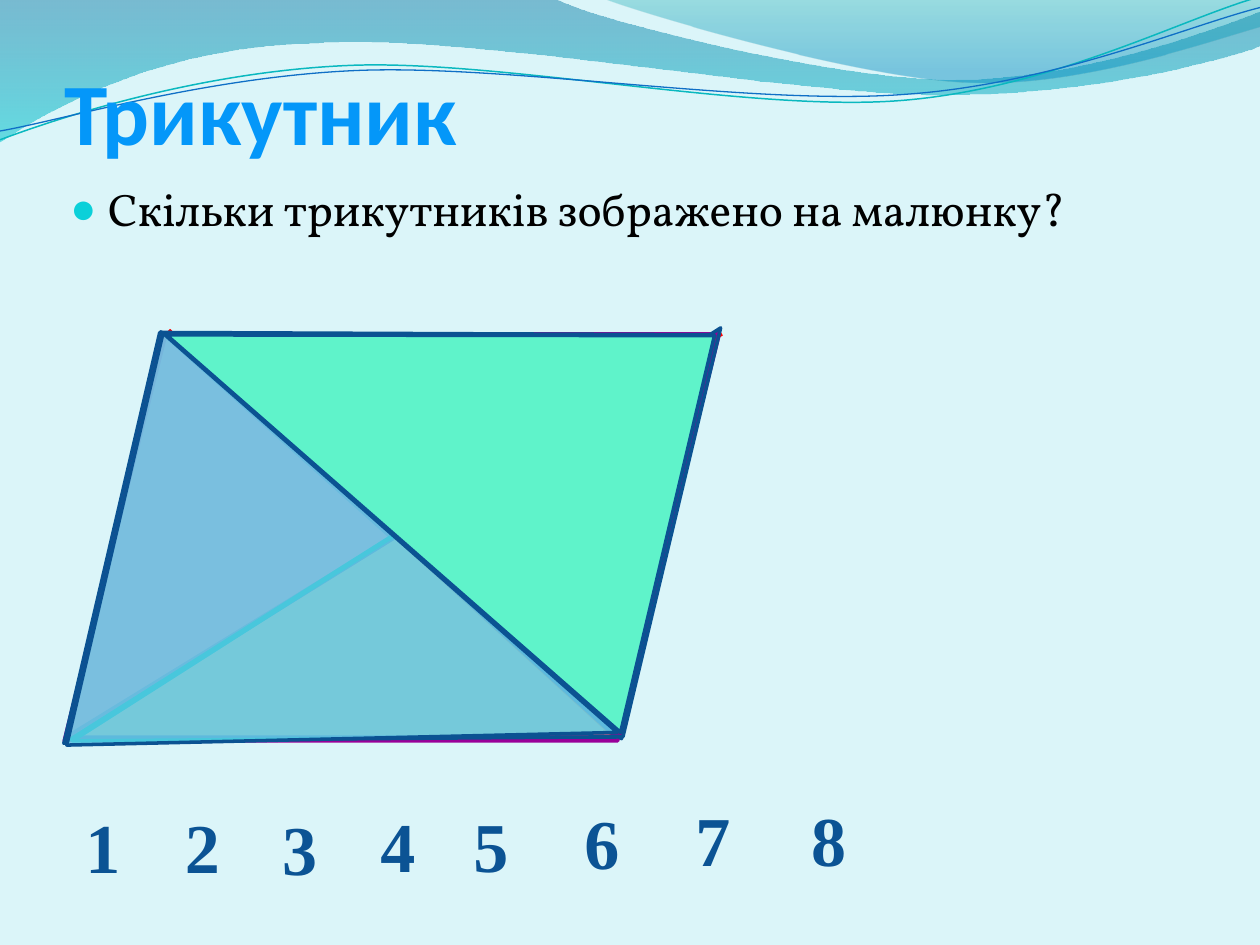
from lxml import etree
from pptx import Presentation
from pptx.dml.color import RGBColor
from pptx.enum.shapes import MSO_CONNECTOR as CONN, MSO_SHAPE as SHAPE
from pptx.enum.text import MSO_ANCHOR as ANCHOR
from pptx.oxml.ns import qn
from pptx.util import Pt

PX = 9144  # EMU per px, 100 px to the inch
INK, RED, PURPLE = "0B5292", "FF0000", "990099"


def paint(fill, parent, *stops):
    """Solid fill for one (hex, alpha) stop, else a vertical gradient of (hex, alpha, pos)."""
    if len(stops) == 1:
        fill.solid()
        fill.fore_color.rgb = RGBColor.from_string(stops[0][0])
        clr = parent.find(qn("a:solidFill"))[0]
        etree.SubElement(clr, qn("a:alpha"), val=str(stops[0][1] * 1000))
        return
    fill.background()
    grad = etree.Element(qn("a:gradFill"), rotWithShape="1")
    gs_lst = etree.SubElement(grad, qn("a:gsLst"))
    for color, alpha, pos in stops:
        gs = etree.SubElement(gs_lst, qn("a:gs"), pos=str(pos * 1000))
        clr = etree.SubElement(gs, qn("a:srgbClr"), val=color)
        etree.SubElement(clr, qn("a:alpha"), val=str(alpha * 1000))
    etree.SubElement(grad, qn("a:lin"), ang="5400000", scaled="1")
    parent.replace(parent.find(qn("a:noFill")), grad)


def outline(start, segments, close):
    """Freeform of lines (one point) and cubic curves (three points)."""
    fb = slide.shapes.build_freeform(*start, scale=PX)
    fb.add_line_segments([pt for seg in segments for pt in seg], close=close)
    shape = fb.convert_to_shape()
    steps = iter(list(shape._element.spPr.iter(qn("a:lnTo"))))
    for seg in segments:
        step = next(steps)
        if len(seg) == 3:
            curve = etree.Element(qn("a:cubicBezTo"))
            step.getparent().replace(step, curve)
            curve.append(step[0])
            for _ in range(2):
                extra = next(steps)
                curve.append(extra[0])
                extra.getparent().remove(extra)
    return shape


prs = Presentation()
prs.slide_width, prs.slide_height = 1000 * PX, 750 * PX
slide = prs.slides.add_slide(prs.slide_layouts[6])
slide.background.fill.solid()
slide.background.fill.fore_color.rgb = RGBColor.from_string("DBF5F9")

# Header waves: start, segments, gradient stops, line
waves = [
    ((0, 0), [[(440, -1)],
              [(476, 17), (664, 63), (758, 63)], [(853, 63), (958, 26), (1000, 9)],
              [(1001, 36)],
              [(983, 44), (870, 76), (746, 75)], [(622, 75), (382, 28), (257, 34)],
              [(129, 36), (46, 83), (-1, 113)]],
     [("0074A1", 45, 0), ("00C6CF", 55, 100)], None),
    ((479, -1), [[(509, 11), (682, 62), (769, 65)], [(856, 69), (961, 32), (1000, 21)],
                 [(1000, 0)]],
     [("00A1A9", 30, 0), ("008BBF", 45, 80)], None),
    ((0, 111), [[(48, 93), (158, 57), (277, 52)], [(395, 47), (593, 89), (713, 80)],
                [(833, 71), (938, 15), (998, -2)]], None, ("0AB8BF", 0.85)),
    ((0, 104), [[(47, 96), (164, 61), (283, 56)], [(403, 51), (597, 84), (717, 75)],
                [(836, 67), (941, 21), (1000, 6)]], None, ("0F6FC6", 0.75)),
]
for start, segments, stops, line in waves:
    s = outline(start, segments, bool(stops))
    s.shadow.inherit = False
    if stops:
        paint(s.fill, s._element.spPr, *stops)
        s.line.fill.background()
    else:
        s.fill.background()
        s.line.color.rgb = RGBColor.from_string(line[0])
        s.line.width = Pt(line[1])

# Parallelogram
s = slide.shapes.add_shape(SHAPE.PARALLELOGRAM, 51 * PX, 265 * PX, 520 * PX, 323 * PX)
s.shadow.inherit = False
paint(s.fill, s._element.spPr, ("C2149D", 23))
s.line.color.rgb = RGBColor.from_string(PURPLE)
s.line.width = Pt(2)

# Diagonals
for ends in [(134, 262, 488, 585), (53, 588, 573, 265)]:
    c = slide.shapes.add_connector(CONN.STRAIGHT, *(v * PX for v in ends))
    c.line.color.rgb = RGBColor.from_string(RED)
    c.line.width = Pt(2)
    etree.SubElement(c._element.spPr, qn("a:effectLst"))

# Overlapping triangles: box, rotation, apex, colour, opacity
triangles = [
    ((30, 341, 330, 215), 103.1, 0.356, RED, 30),
    ((268, 302, 324, 206), 283.2, 0.361, "C00000", 54),
    ((137, 267, 431, 159), 180, 0.595, "FFFF00", 100),
    ((58, 426, 431, 159), 0, 0.595, "FFFF00", 49),
    ((-59, 211, 607, 235), 327.7, 0.393, "C2149D", 70),
    ((72, 406, 610, 232), 147.5, 0.393, PURPLE, 58),
    ((167, 173, 479, 286), 41.2, 0.684, "5FF3CA", 100),
    ((-28, 386, 480, 296), 221.3, 0.67, "5EF0F7", 74),
]
for box, rotation, apex, color, alpha in triangles:
    s = slide.shapes.add_shape(SHAPE.ISOSCELES_TRIANGLE, *(v * PX for v in box))
    s.rotation = rotation
    s.adjustments[0] = apex
    s.shadow.inherit = False
    paint(s.fill, s._element.spPr, (color, alpha))
    s.line.color.rgb = RGBColor.from_string(INK)
    s.line.width = Pt(2)

# Title
tf = slide.shapes.add_textbox(51 * PX, 4 * PX, 427 * PX, 125 * PX).text_frame
tf.word_wrap = True
tf.vertical_anchor = ANCHOR.BOTTOM
tf.margin_left = tf.margin_right = tf.margin_bottom = 0
r = tf.paragraphs[0].add_run()
r.text = "Трикутник"
r.font.name, r.font.size, r.font.bold = "Calibri", Pt(50), True
paint(r.font.fill, r._r.get_or_add_rPr(),
      ("7DC4FF", 100, 0), ("0497F9", 100, 75), ("0074A1", 100, 100))

# Question with bullet
tf = slide.shapes.add_textbox(46 * PX, 139 * PX, 900 * PX, 71 * PX).text_frame
tf.word_wrap = True
p = tf.paragraphs[0]
pPr = p._p.get_or_add_pPr()
pPr.set("marL", str(30 * PX))
pPr.set("indent", str(-30 * PX))
before = etree.SubElement(pPr, qn("a:spcBef"))
etree.SubElement(before, qn("a:spcPct"), val="20000")
clr = etree.SubElement(pPr, qn("a:buClr"))
etree.SubElement(clr, qn("a:srgbClr"), val="0BD0D9")
etree.SubElement(pPr, qn("a:buSzPct"), val="95000")
etree.SubElement(pPr, qn("a:buFont"), typeface="Times New Roman")
etree.SubElement(pPr, qn("a:buChar"), char="●")
r = p.add_run()
r.text = "Скільки трикутників зображено на малюнку?"
r.font.name, r.font.size = "Vollkorn", Pt(26)
r.font.color.rgb = RGBColor.from_string("000000")

# Answer choices
places = [(58, 633), (137, 633), (214, 634), (292, 632),
          (366, 632), (454, 630), (542, 627), (634, 627)]
for number, (x, y) in enumerate(places, 1):
    tf = slide.shapes.add_textbox(x * PX, y * PX, 63 * PX, 77 * PX).text_frame
    tf.word_wrap = True
    r = tf.paragraphs[0].add_run()
    r.text = str(number)
    r.font.name, r.font.size, r.font.bold = "Times New Roman", Pt(40), True
    r.font.color.rgb = RGBColor.from_string("0B5394")

prs.save("out.pptx")
